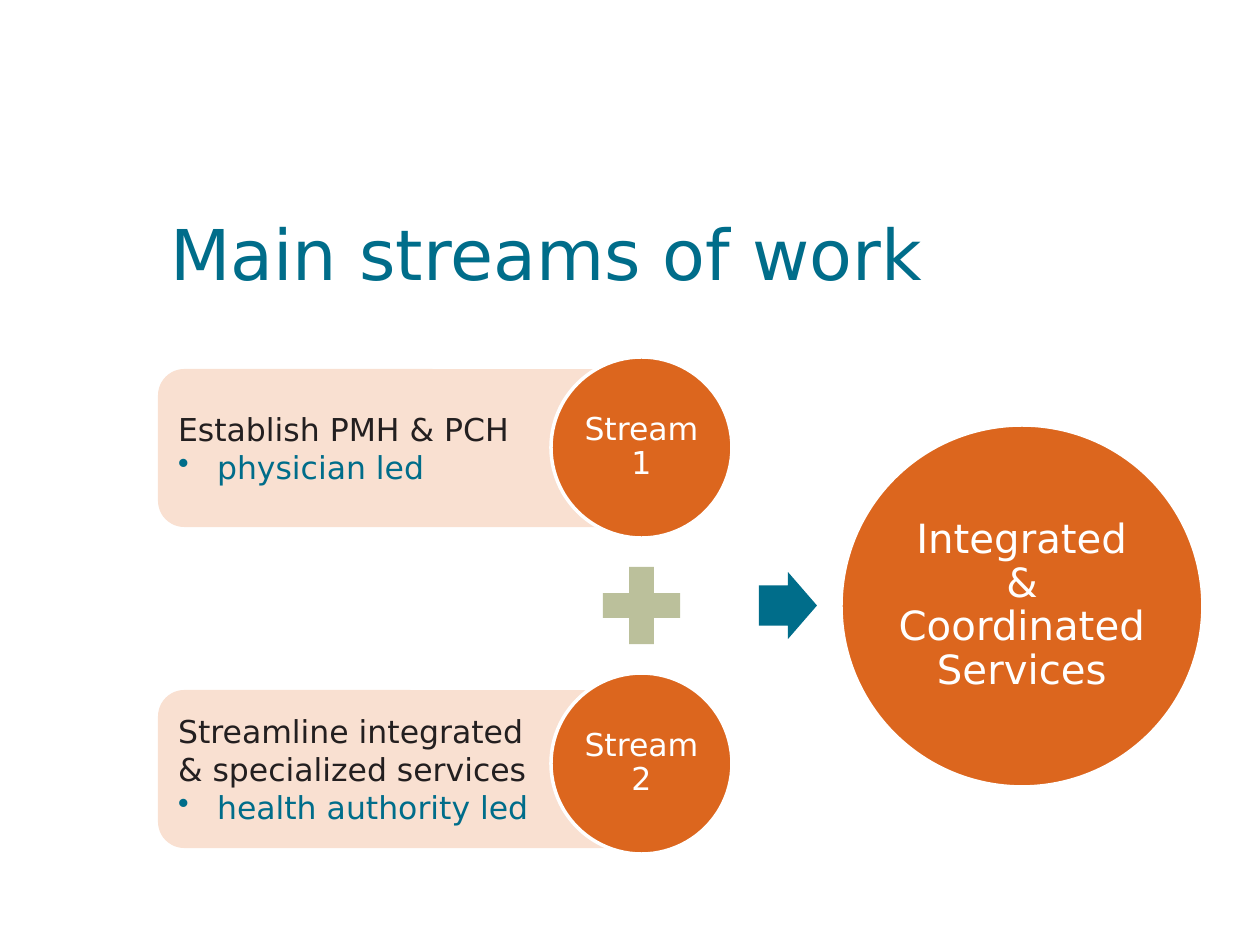
import pptx
import pptx.util
import pptx.dml.color
import pptx.enum.shapes
import pptx.enum.text
import pptx.oxml.ns
import lxml.etree


class Theme:
    font = "DejaVu Sans"
    teal = "006D8A"
    orange = "DC661E"
    peach = "F9E0D1"
    sage = "BBC09B"
    ink = "231F20"
    white = "FFFFFF"
    title = 40
    goal = 23
    body = 18


SHAPE = pptx.enum.shapes.MSO_SHAPE
ALIGN = pptx.enum.text.PP_ALIGN
PX = 914400 / 126


def px(n):
    return pptx.util.Emu(round(n * PX))


def write(box, text, color, size=Theme.body, align=ALIGN.LEFT, inset=None,
          gap=None, bullet=False, add=False):
    frame = box.text_frame
    frame.word_wrap = True
    frame.vertical_anchor = pptx.enum.text.MSO_ANCHOR.MIDDLE
    if inset is not None:
        frame.margin_left = frame.margin_right = px(inset)
        frame.margin_top = frame.margin_bottom = px(inset)
    para = frame.add_paragraph() if add else frame.paragraphs[0]
    para.text = text
    para.alignment = align
    if gap:
        para.line_spacing = gap
    if bullet:
        props = para._p.get_or_add_pPr()
        props.set("marL", str(px(39)))
        props.set("indent", str(-px(39)))
        mark = lxml.etree.SubElement(props, pptx.oxml.ns.qn("a:buChar"))
        mark.set("char", "•")
    for run in para.runs:
        run.font.name = Theme.font
        run.font.size = pptx.util.Pt(size)
        run.font.color.rgb = pptx.dml.color.RGBColor.from_string(color)


def draw(kind, x, y, w, h, fill, line=None):
    shape = slide.shapes.add_shape(kind, px(x), px(y), px(w), px(h))
    shape.shadow.inherit = False
    shape.fill.solid()
    shape.fill.fore_color.rgb = pptx.dml.color.RGBColor.from_string(fill)
    if line:
        shape.line.color.rgb = pptx.dml.color.RGBColor.from_string(line)
        shape.line.width = pptx.util.Pt(2)
    else:
        shape.line.fill.background()
    return shape


deck = pptx.Presentation()
deck.slide_width = px(1260)
deck.slide_height = px(945)
slide = deck.slides.add_slide(deck.slide_layouts[6])

# Title
title = slide.shapes.add_textbox(px(158), px(179), px(1081), px(147))
write(title, "Main streams of work", Theme.teal, size=Theme.title)

# Streams: a panel with its circle on the right end
streams = [
    ("Stream 1", "Establish PMH & PCH", "physician led", 369, 357),
    ("Stream 2", "Streamline integrated\v& specialized services",
     "health authority led", 690, 673),
]
for name, task, lead, top, rise in streams:
    panel = draw(SHAPE.ROUNDED_RECTANGLE, 158, top, 483, 158, Theme.peach)
    write(panel, task, Theme.ink)
    write(panel, lead, Theme.teal, bullet=True, add=True)
    disc = draw(SHAPE.OVAL, 551, rise, 181, 181, Theme.orange, Theme.white)
    write(disc, name, Theme.white, align=ALIGN.CENTER, inset=4, gap=0.9)

# Plus sign and arrow
draw(SHAPE.MATH_PLUS, 589, 553, 105, 105, Theme.sage)
arrow = draw(SHAPE.RIGHT_ARROW, 759, 572, 58, 67, Theme.teal)
arrow.adjustments[0] = 0.6

# Shared goal
goal = draw(SHAPE.OVAL, 841, 425, 362, 362, Theme.orange, Theme.white)
write(goal, "Integrated & Coordinated Services", Theme.white,
      size=Theme.goal, align=ALIGN.CENTER, inset=4, gap=0.9)

deck.save("out.pptx")
